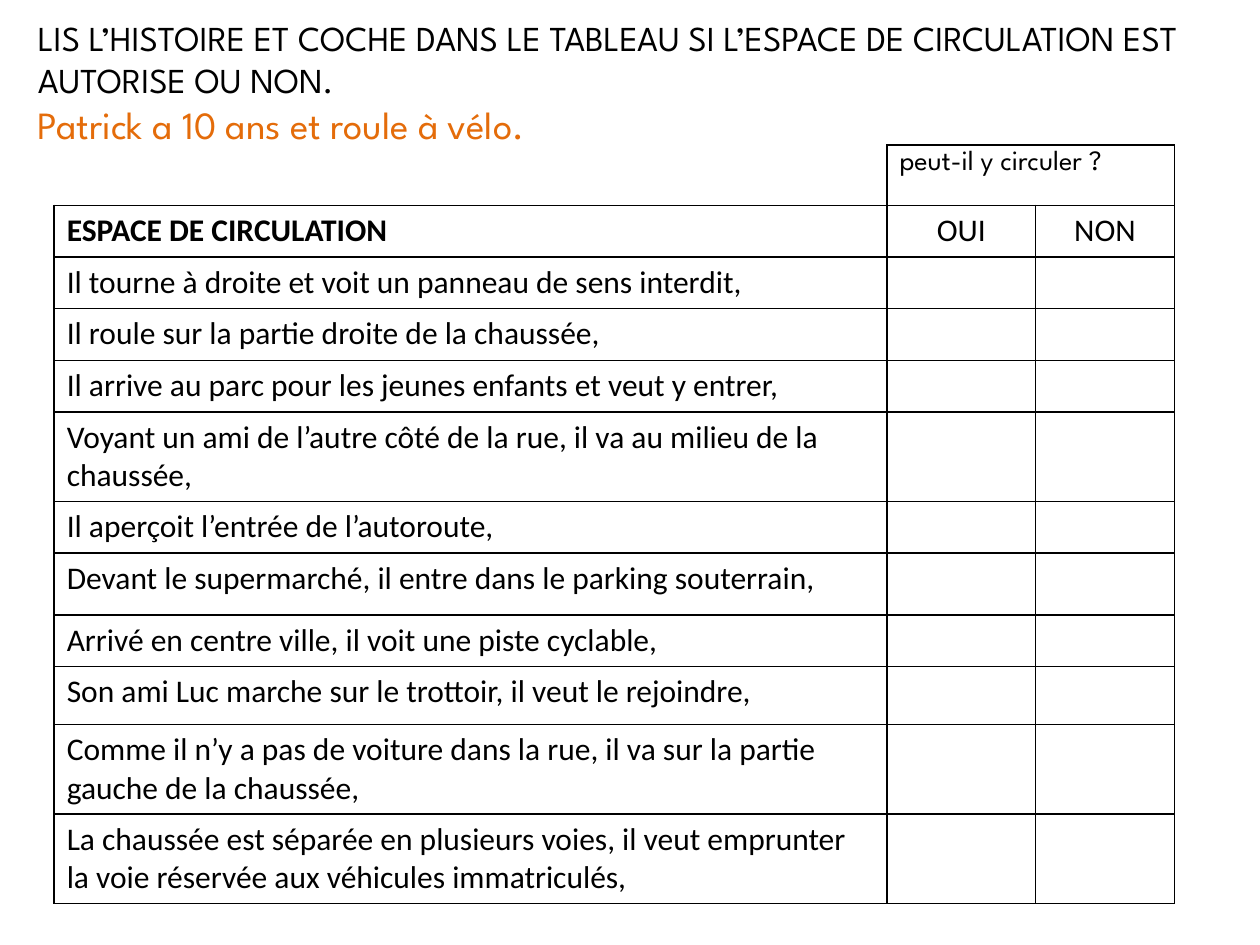
from lxml.etree import SubElement
from pptx import Presentation
from pptx.dml.color import RGBColor
from pptx.enum.text import MSO_ANCHOR, PP_ALIGN
from pptx.oxml.ns import qn
from pptx.util import Inches, Pt

BLACK = "000000"
ORANGE = "E46C0A"
COLUMN_WIDTHS = [6.61, 1.18, 1.1]
HEADINGS = ["ESPACE DE CIRCULATION", "OUI", "NON"]
ROW_HEIGHT = 0.41
TALL_ROWS = {0: 0.48, 7: 0.49, 9: 0.46}
SITUATIONS = [
    "Il tourne à droite et voit un panneau de sens interdit,",
    "Il roule sur la partie droite de la chaussée,",
    "Il arrive au parc pour les jeunes enfants et veut y entrer,",
    "Voyant un ami de l’autre côté de la rue, il va au milieu de la chaussée,",
    "Il aperçoit l’entrée de l’autoroute,",
    "Devant le supermarché, il entre dans le parking souterrain,",
    "Arrivé en centre ville, il voit une piste cyclable,",
    "Son ami Luc marche sur le trottoir, il veut le rejoindre,",
    "Comme il n’y a pas de voiture dans la rue, il va sur la partie gauche de la chaussée,",
    "La chaussée est séparée en plusieurs voies, il veut emprunter la voie réservée "
    "aux véhicules immatriculés,",
]


def color(value):
    """Turn a hex string into a colour."""
    return RGBColor.from_string(value)


def add_span(para, text, size, font="Calibri", bold=False, ink=BLACK):
    """Add one formatted run to a paragraph."""
    span = para.add_run()
    span.text = text
    span.font.size = Pt(size)
    span.font.name = font
    span.font.bold = bold
    span.font.color.rgb = color(ink)


def set_borders(cell, sides):
    """Draw black lines on the named sides and none on the others."""
    properties = cell._tc.get_or_add_tcPr()
    for side in "LRTB":
        line = SubElement(properties, qn(f"a:ln{side}"), w=str(Pt(1)))
        if side in sides:
            fill = SubElement(line, qn("a:solidFill"))
            SubElement(fill, qn("a:srgbClr"), val=BLACK)
        else:
            SubElement(line, qn("a:noFill"))


def add_title(page):
    """Fill the title with the instruction and the opening of the story."""
    title = page.shapes.title
    title.left, title.top = Inches(0.2), Inches(0.03)
    title.width, title.height = Inches(9.8), Inches(1.24)
    title.text_frame.vertical_anchor = MSO_ANCHOR.MIDDLE
    para = title.text_frame.paragraphs[0]
    para.alignment = PP_ALIGN.LEFT
    add_span(para, "LIS L’HISTOIRE ET COCHE DANS LE TABLEAU SI L’ESPACE DE CIRCULATION "
             "EST AUTORISE OU NON.", 20, "League Spartan")
    para.add_line_break()
    add_span(para, "Patrick a 10 ans et roule à vélo.", 22, "League Spartan", ink=ORANGE)


def add_grid(page):
    """Add the bordered table and return it."""
    row_count = len(SITUATIONS) + 2
    frame = page.shapes.add_table(row_count, len(COLUMN_WIDTHS), Inches(0.43), Inches(1.15),
                                  Inches(sum(COLUMN_WIDTHS)), Inches(ROW_HEIGHT * row_count))
    table = frame.table
    table.first_row = table.horz_banding = False
    for column, width in zip(table.columns, COLUMN_WIDTHS):
        column.width = Inches(width)
    for index, row in enumerate(table.rows):
        row.height = Inches(TALL_ROWS.get(index, ROW_HEIGHT))
        for position, cell in enumerate(row.cells):
            set_borders(cell, "RB" if index == position == 0 else "LRTB")
            cell.fill.background()
    return table


def fill_grid(table):
    """Write the headings and the situations."""
    question = table.cell(0, 1)
    question.merge(table.cell(0, 2))
    add_span(question.text_frame.paragraphs[0], "peut-il y circuler ?", 16, "League Spartan")
    for index, heading in enumerate(HEADINGS):
        para = table.cell(1, index).text_frame.paragraphs[0]
        para.alignment = PP_ALIGN.CENTER if index else PP_ALIGN.LEFT
        add_span(para, heading, 18, bold=index == 0)
    for index, situation in enumerate(SITUATIONS, start=2):
        add_span(table.cell(index, 0).text_frame.paragraphs[0], situation, 18)


def main():
    """Build and save the slide."""
    deck = Presentation()
    deck.slide_width, deck.slide_height = Inches(10), Inches(7.5)
    page = deck.slides.add_slide(deck.slide_layouts[5])
    add_title(page)
    fill_grid(add_grid(page))
    deck.save("out.pptx")


if __name__ == "__main__":
    main()
